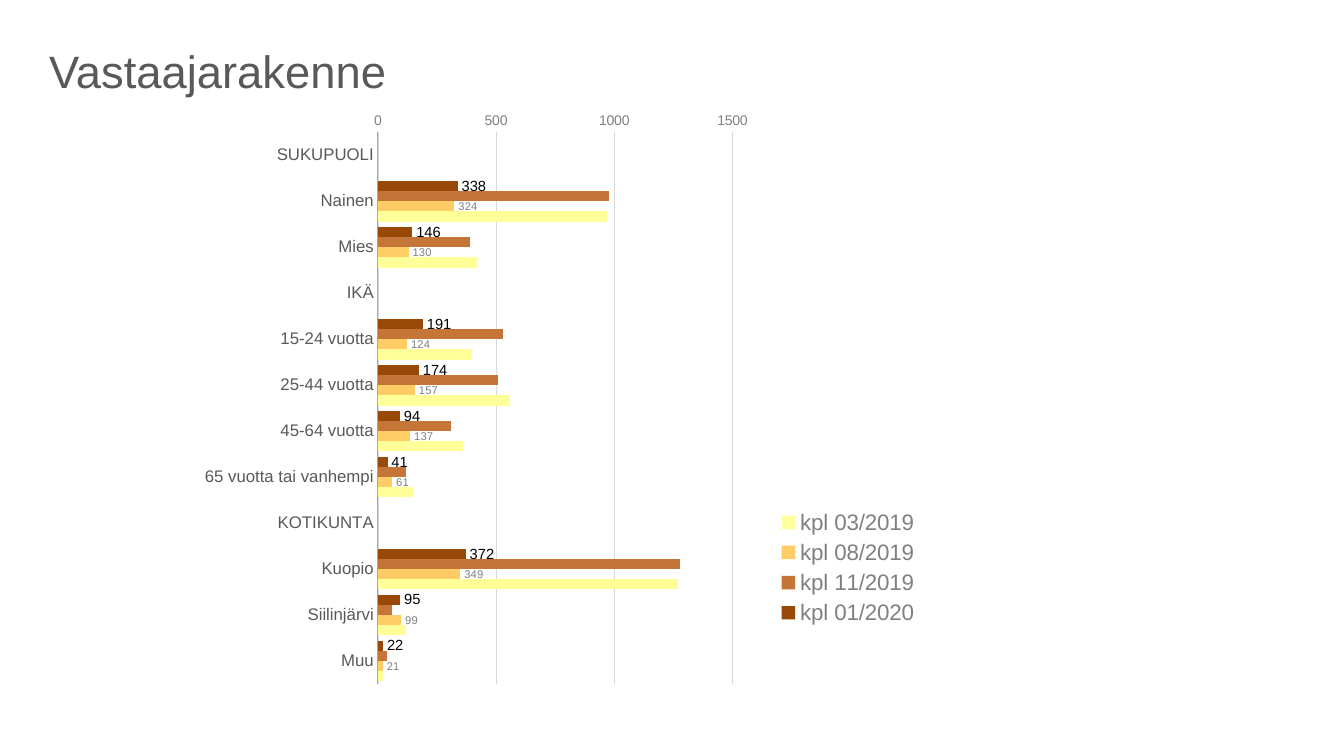
import pptx
import pptx.chart.data
import pptx.dml.color
import pptx.enum.chart
import pptx.enum.text
import pptx.oxml
import pptx.oxml.ns
import pptx.util

Pt = pptx.util.Pt
RGB = pptx.dml.color.RGBColor
charts = pptx.enum.chart

BLACK = RGB(0x00, 0x00, 0x00)
DARK_GREY = RGB(0x59, 0x59, 0x59)
GREY = RGB(0x80, 0x80, 0x80)
AXIS_GREY = RGB(0xA6, 0xA6, 0xA6)
GRID_GREY = RGB(0xD9, 0xD9, 0xD9)
BROWN = RGB(0x98, 0x48, 0x07)
COPPER = RGB(0xC4, 0x75, 0x37)
AMBER = RGB(0xFF, 0xCC, 0x66)
YELLOW = RGB(0xFF, 0xFF, 0x99)

FONT = "Arial"
TITLE_BOX = (28, 18.7, 772.6, 38.9)
CHART_BOX = (79.9, 79.9, 581, 441.4)
PLOT_LAYOUT = (0.327, 0.033, 0.436, 0.893)
LEGEND_LAYOUT = (0.815, 0.635, 0.18, 0.205)

CATEGORIES = [
    "SUKUPUOLI", "Nainen", "Mies",
    "IKÄ", "15-24 vuotta", "25-44 vuotta", "45-64 vuotta", "65 vuotta tai vanhempi",
    "KOTIKUNTA", "Kuopio", "Siilinjärvi", "Muu",
]
# Name, values, bar colour, label size and colour
SURVEYS = [
    ("kpl 01/2020", [None, 338, 146, None, 191, 174, 94, 41, None, 372, 95, 22],
     BROWN, (10.5, BLACK)),
    ("kpl 11/2019", [None, 980, 390, None, 530, 510, 310, 120, None, 1280, 60, 40],
     COPPER, None),
    ("kpl 08/2019", [None, 324, 130, None, 124, 157, 137, 61, None, 349, 99, 21],
     AMBER, (8, GREY)),
    ("kpl 03/2019", [None, 970, 420, None, 400, 560, 360, 150, None, 1270, 120, 20],
     YELLOW, None),
]


def set_attributes(target, formats):
    for name, value in formats.items():
        setattr(target, name, value)


def set_font(font, size, color):
    set_attributes(font, {"name": FONT, "size": Pt(size), "bold": False})
    font.color.rgb = color


def set_line(line, width, color):
    line.width = Pt(width)
    line.color.rgb = color


def make_layout(fractions, inner=False):
    """Return a manual layout element from x, y, width and height fractions."""
    target = '<c:layoutTarget val="inner"/>' if inner else ""
    modes = '<c:xMode val="edge"/><c:yMode val="edge"/>'
    sizes = "".join(f'<c:{tag} val="{value}"/>' for tag, value in zip("xywh", fractions))
    return pptx.oxml.parse_xml(
        f'<c:layout {pptx.oxml.ns.nsdecls("c")}><c:manualLayout>'
        f"{target}{modes}{sizes}</c:manualLayout></c:layout>")


def place_layout(parent, layout, after=None):
    for old in parent.findall(pptx.oxml.ns.qn("c:layout")):
        parent.remove(old)
    position = 0
    if after:
        position = parent.index(parent.find(pptx.oxml.ns.qn(after))) + 1
    parent.insert(position, layout)


def add_title(page, box):
    frame = page.shapes.add_textbox(*map(Pt, box)).text_frame
    set_attributes(frame, {
        "word_wrap": True,
        "vertical_anchor": pptx.enum.text.MSO_ANCHOR.TOP,
        "margin_top": Pt(8),
        "margin_bottom": 0,
    })
    para = frame.paragraphs[0]
    para.line_spacing = 1.1
    span = para.add_run()
    span.text = "Vastaajarakenne"
    set_font(span.font, 32.4, DARK_GREY)


def format_axes(chart):
    categories, values = chart.category_axis, chart.value_axis
    set_attributes(categories, {
        "reverse_order": True,
        "crosses": charts.XL_AXIS_CROSSES.MAXIMUM,
        "has_major_gridlines": False,
    })
    set_attributes(values, {
        "minimum_scale": 0,
        "maximum_scale": 1500,
        "major_unit": 500,
        "has_major_gridlines": True,
    })
    for axis, size, color in ((categories, 12, DARK_GREY), (values, 10, GREY)):
        set_attributes(axis, {
            "major_tick_mark": charts.XL_TICK_MARK.NONE,
            "minor_tick_mark": charts.XL_TICK_MARK.NONE,
        })
        set_font(axis.tick_labels.font, size, color)
    set_line(categories.format.line, 0.75, AXIS_GREY)
    values.format.line.fill.background()
    set_line(values.major_gridlines.format.line, 0.25, GRID_GREY)


def format_bars(plot):
    set_attributes(plot, {"gap_width": 50, "overlap": 0, "vary_by_categories": False})
    for series, (_, _, color, label) in zip(plot.series, SURVEYS):
        series.format.fill.solid()
        series.format.fill.fore_color.rgb = color
        series.format.line.fill.background()
        if label:
            series.data_labels.show_value = True
            series.data_labels.position = charts.XL_LABEL_POSITION.OUTSIDE_END
            set_font(series.data_labels.font, *label)


def add_respondent_chart(page, box):
    data = pptx.chart.data.CategoryChartData()
    data.categories = CATEGORIES
    for name, values, _, _ in SURVEYS:
        data.add_series(name, values)
    chart = page.shapes.add_chart(
        charts.XL_CHART_TYPE.BAR_CLUSTERED, *map(Pt, box), data).chart
    set_attributes(chart, {"has_title": False, "has_legend": True})
    set_font(chart.font, 18, BLACK)
    format_axes(chart)
    format_bars(chart.plots[0])
    set_attributes(chart.legend, {
        "position": charts.XL_LEGEND_POSITION.RIGHT,
        "include_in_layout": False,
    })
    set_font(chart.legend.font, 16, GREY)
    plot_area = chart.element.find(".//" + pptx.oxml.ns.qn("c:plotArea"))
    legend = chart.element.find(".//" + pptx.oxml.ns.qn("c:legend"))
    place_layout(plot_area, make_layout(PLOT_LAYOUT, inner=True))
    place_layout(legend, make_layout(LEGEND_LAYOUT), after="c:legendPos")


def main():
    deck = pptx.Presentation()
    set_attributes(deck, {"slide_width": Pt(960), "slide_height": Pt(540)})
    page = deck.slides.add_slide(deck.slide_layouts[6])
    add_title(page, TITLE_BOX)
    add_respondent_chart(page, CHART_BOX)
    deck.save("out.pptx")


if __name__ == "__main__":
    main()
